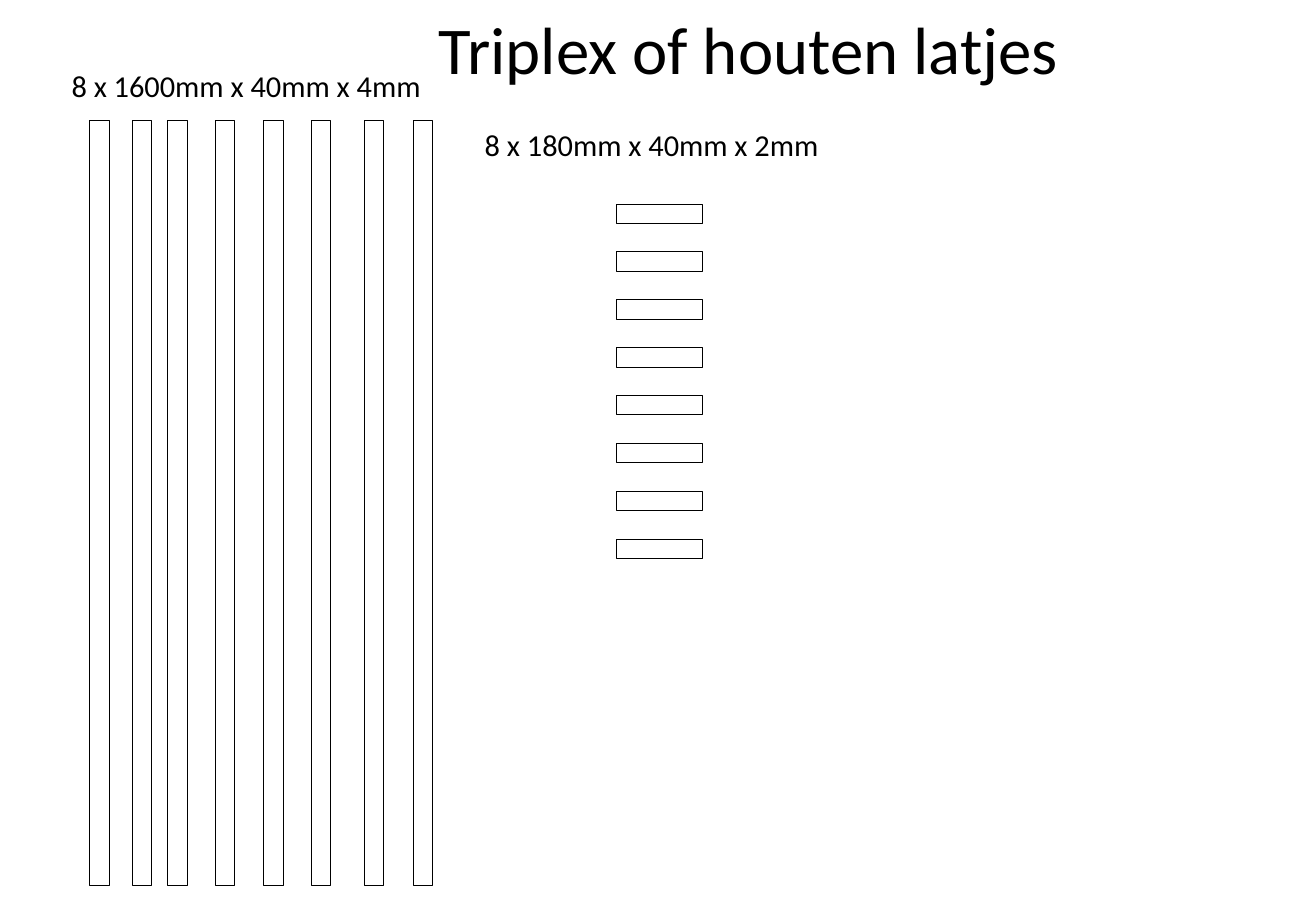
import pptx
import pptx.dml.color
import pptx.enum.shapes
import pptx.enum.text
import pptx.util

BLACK = pptx.dml.color.RGBColor(0, 0, 0)
FONT = "Calibri"
COLS, ROWS = 1083, 750
CELL = pptx.util.Inches(0.01)
SLAT = 16
LABEL = 40
LONG_STEPS = (25, 60, 89, 128, 168, 207, 251, 291)
SHORT_STEPS = [69 + 39.4 * i for i in range(8)]


def grid(*cells):
    """Turn grid cells into lengths."""
    return [round(n * CELL) for n in cells]


def add_text(slide, box, text, size):
    """Add one line of text in the box."""
    frame = slide.shapes.add_textbox(*grid(*box)).text_frame
    frame.text = text
    frame.word_wrap = False
    font = frame.paragraphs[0].runs[0].font
    font.name = FONT
    font.size = pptx.util.Pt(size)
    font.color.rgb = BLACK
    return frame


def add_title(slide, box, text):
    """Add the centred title in the box."""
    frame = add_text(slide, box, text, 39.6)
    frame.word_wrap = True
    frame.vertical_anchor = pptx.enum.text.MSO_ANCHOR.MIDDLE
    frame.paragraphs[0].alignment = pptx.enum.text.PP_ALIGN.CENTER


def add_label(slide, box, text):
    """Add the size label at the top of the box."""
    left, top, width, _ = box
    frame = add_text(slide, (left, top, width, LABEL), text, 18)
    frame.auto_size = pptx.enum.text.MSO_AUTO_SIZE.SHAPE_TO_FIT_TEXT


def add_slat(slide, box):
    """Add one outlined slat."""
    kind = pptx.enum.shapes.MSO_SHAPE.RECTANGLE
    slat = slide.shapes.add_shape(kind, *grid(*box))
    slat.shadow.inherit = False
    slat.fill.background()
    slat.line.color.rgb = BLACK
    slat.line.width = pptx.util.Pt(0.5)


def add_long(slide, box, text):
    """Add a label with upright slats below it."""
    left, top, _, height = box
    add_label(slide, box, text)
    for step in LONG_STEPS:
        add_slat(slide, (left + step, top + 49, SLAT, height - 49))


def add_short(slide, box, text):
    """Add a label with a stack of flat slats below it."""
    left, top, _, _ = box
    add_label(slide, box, text)
    for step in SHORT_STEPS:
        add_slat(slide, (left + 118, top + step, 71, SLAT))


def main():
    """Build the slide and save it."""
    deck = pptx.Presentation()
    deck.slide_width, deck.slide_height = grid(COLS, ROWS)
    slide = deck.slides.add_slide(deck.slide_layouts[6])
    add_title(slide, (296, 0, 640, 79), "Triplex of houten latjes")
    add_long(slide, (49, 50, 311, 679), "8 x 1600mm x 40mm x 4mm")
    add_short(slide, (389, 99, 298, 361), "8 x 180mm x 40mm x 2mm")
    deck.save("out.pptx")


if __name__ == "__main__":
    main()
